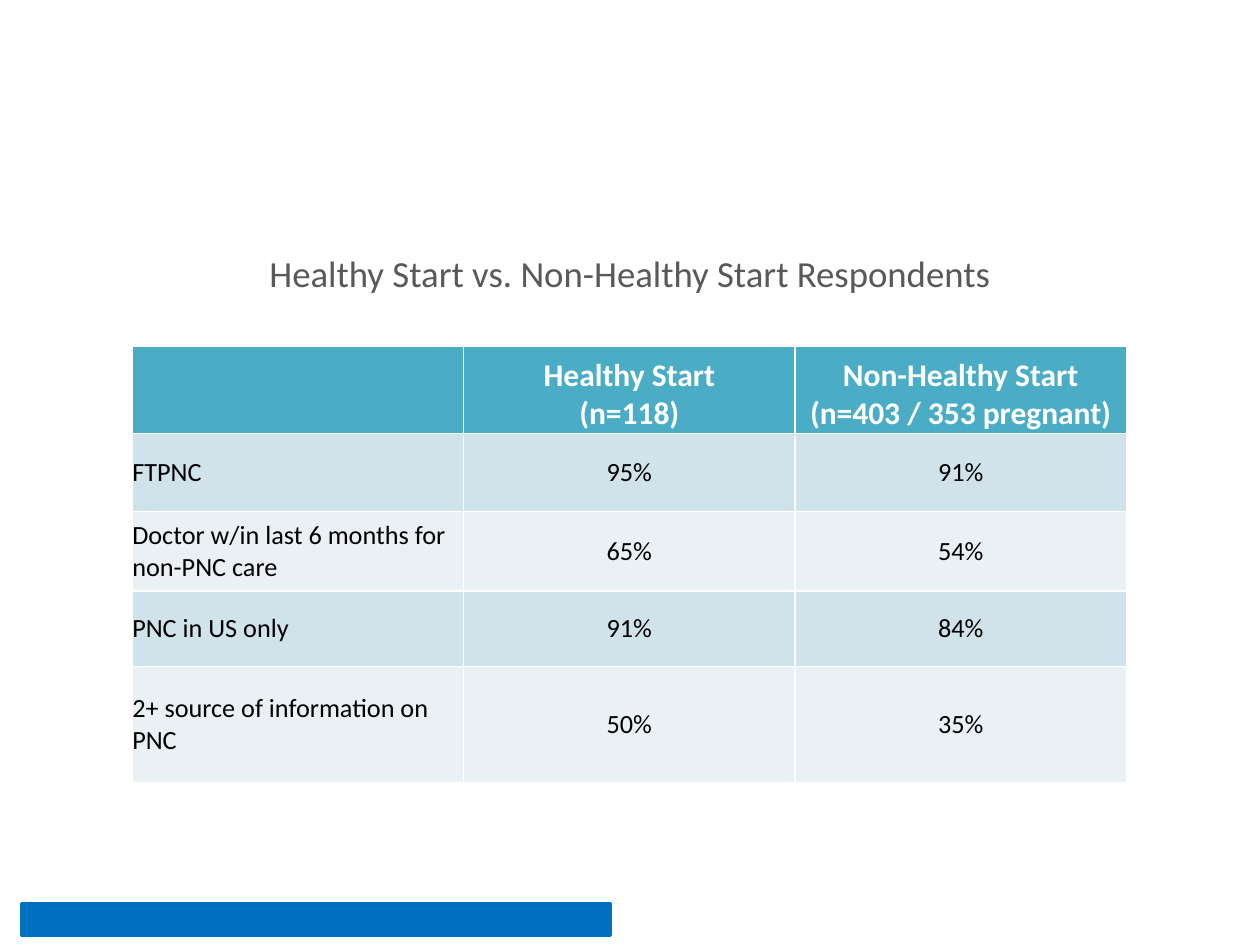
import pptx
import pptx.util
import pptx.dml.color
import pptx.enum.shapes
import pptx.enum.text

PX = 9144
WHITE = "FFFFFF"
BLUE = "0070C0"
MIDDLE = pptx.enum.text.MSO_ANCHOR.MIDDLE
BOTTOM = pptx.enum.text.MSO_ANCHOR.BOTTOM
LEFT = pptx.enum.text.PP_ALIGN.LEFT
CENTER = pptx.enum.text.PP_ALIGN.CENTER


def color(value):
    return pptx.dml.color.RGBColor.from_string(value)


def format_paragraph(paragraph, size, text_color, alignment, bold=False):
    paragraph.alignment = alignment
    paragraph.font.name = "Calibri"
    paragraph.font.size = pptx.util.Pt(size)
    paragraph.font.bold = bold
    paragraph.font.color.rgb = color(text_color)


presentation = pptx.Presentation()
presentation.slide_width = 1000 * PX
presentation.slide_height = 750 * PX
slide = presentation.slides.add_slide(presentation.slide_layouts[5])

title = slide.shapes.title
title.left, title.top, title.width, title.height = 50 * PX, 154 * PX, 900 * PX, 125 * PX
title.text_frame.text = "Healthy Start vs. Non-Healthy Start Respondents"
title.text_frame.vertical_anchor = MIDDLE
format_paragraph(title.text_frame.paragraphs[0], 21, "595959", CENTER)

footer_bar = slide.shapes.add_shape(
    pptx.enum.shapes.MSO_SHAPE.RECTANGLE, 17 * PX, 717 * PX, 467 * PX, 25 * PX)
footer_bar.shadow.inherit = False
footer_bar.fill.solid()
footer_bar.fill.fore_color.rgb = color(BLUE)
footer_bar.line.color.rgb = color(BLUE)
footer_bar.line.width = pptx.util.Pt(2)

rows = [
    ("", "Healthy Start\n(n=118)", "Non-Healthy Start\n(n=403 / 353 pregnant)"),
    ("FTPNC", "95%", "91%"),
    ("Doctor w/in last 6 months for non-PNC care", "65%", "54%"),
    ("PNC in US only", "91%", "84%"),
    ("2+ source of information on PNC", "50%", "35%"),
]
row_heights = [69, 62, 63, 60, 92]
table = slide.shapes.add_table(
    len(rows), 3, 105 * PX, 275 * PX, 789 * PX, sum(row_heights) * PX).table
for column in table.columns:
    column.width = 263 * PX

for row_index, (values, height) in enumerate(zip(rows, row_heights)):
    table.rows[row_index].height = height * PX
    header = row_index == 0
    row_fill = "4BACC6" if header else "D0E3EA" if row_index % 2 else "E9F1F5"
    for column_index, value in enumerate(values):
        cell = table.cell(row_index, column_index)
        cell.fill.solid()
        cell.fill.fore_color.rgb = color(row_fill)
        cell.margin_left = cell.margin_right = cell.margin_top = cell.margin_bottom = 0
        cell.vertical_anchor = BOTTOM if header else MIDDLE
        cell.text_frame.text = value
        for paragraph in cell.text_frame.paragraphs:
            format_paragraph(
                paragraph, 18 if header else 15, WHITE if header else "000000",
                CENTER if column_index else LEFT, header)

presentation.save("out.pptx")
